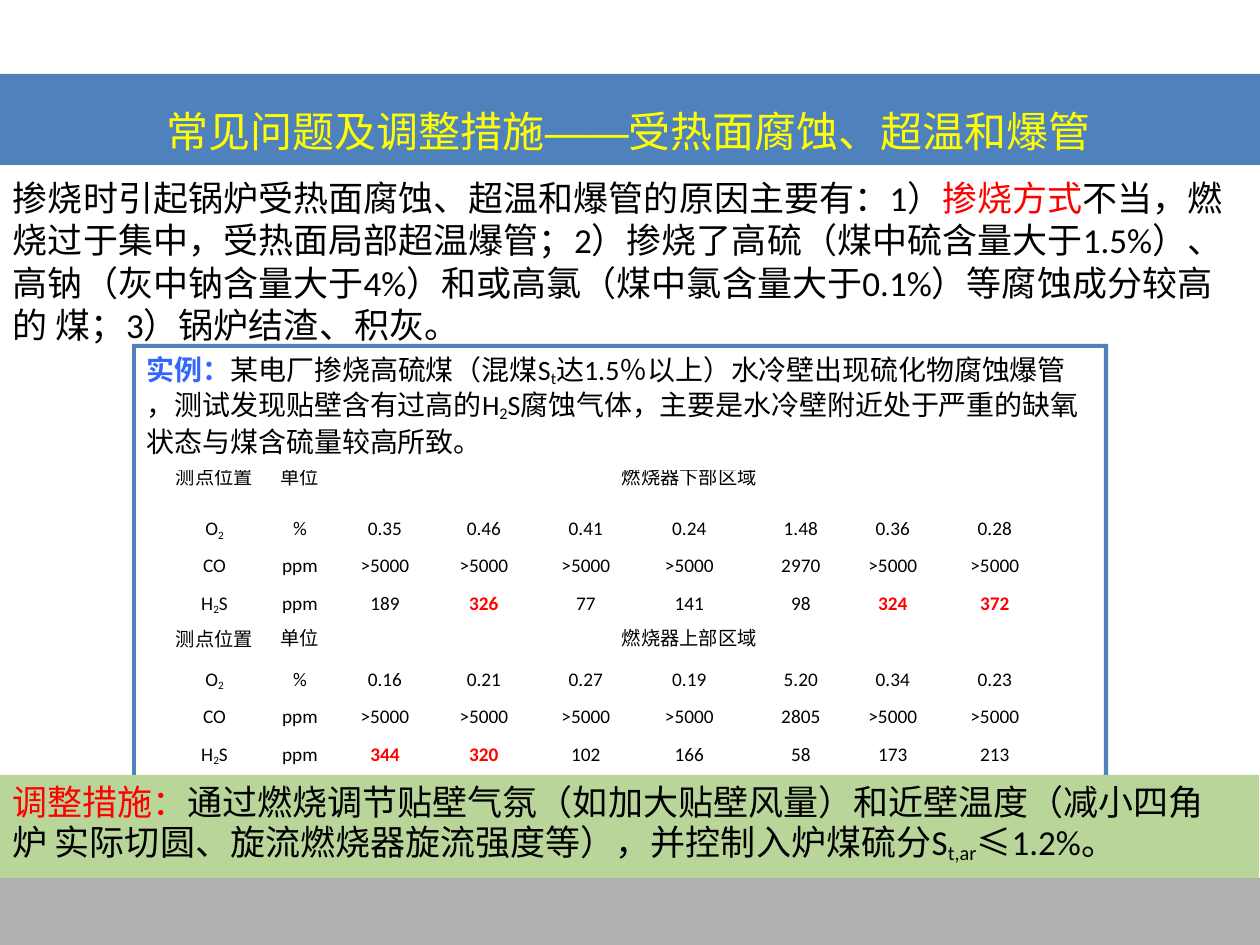
from itertools import groupby

from pptx import Presentation
from pptx import util as u
from pptx.dml.color import RGBColor
from pptx.enum import shapes, text

PX = 914400 / 126
HAN, LATIN, DASH = "Noto Sans CJK SC", "Calibri", "Arial"
COLORS = {
    "gray": "B1B1B1", "blue": "4F81BC", "green": "B9D599", "yellow": "FFFF00",
    "black": "000000", "red": "FF0000", "label": "3366FF",
}

TITLE = [("常见问题及调整措施", {}), ("——", {"face": DASH}),
         ("受热面腐蚀、超温和爆管", {})]
RED, SUB = {"color": "red"}, {"sub": True}
CAUSE = [
    ("掺烧时引起锅炉受热面腐蚀、超温和爆管的原因主要有：1）", {}),
    ("掺烧方式", RED),
    ("不当，燃 烧过于集中，受热面局部超温爆管；2）掺烧了高硫（煤中硫含量大于1.5%）、 "
     "高钠（灰中钠含量大于4%）和或高氯（煤中氯含量大于0.1%）等腐蚀成分较高的 煤；"
     "3）锅炉结渣、积灰。", {}),
]
CASE = [
    ("实例：", {"color": "label", "bold": True}),
    ("某电厂掺烧高硫煤（混煤S", {}), ("t", SUB),
    ("达1.5％以上）水冷壁出现硫化物腐蚀爆管", {}),
]
FINDING = [
    ("，测试发现贴壁含有过高的H", {}), ("2", SUB),
    ("S腐蚀气体，主要是水冷壁附近处于严重的缺氧 状态与煤含硫量较高所致。", {}),
]
ACTION = [
    ("调整措施：", RED),
    ("通过燃烧调节贴壁气氛（如加大贴壁风量）和近壁温度（减小四角炉 实际切圆、"
     "旋流燃烧器旋流强度等），并控制入炉煤硫分S", {}),
    ("t,ar", SUB), ("≤1.2%。", {}),
]

WIDTHS = [97, 74, 96, 102, 81, 147, 76, 105, 79]
HEIGHTS = [29, 40, 37, 74, 40, 37, 30]
SHIFTS = {4: 21, 7: 3, 8: 23}
PADS = {"O2": 10, "CO": 7, "H2S": 8}
LOWER = {0: "测点位置", 1: "单位", 5: "燃烧器下部区域"}
UPPER = {**LOWER, 5: "燃烧器上部区域"}
GASES = [
    ["O2", "%", "0.35", "0.46", "0.41", "0.24", "1.48", "0.36", "0.28"],
    ["CO", "ppm", ">5000", ">5000", ">5000", ">5000", "2970", ">5000", ">5000"],
    ["H2S", "ppm", "189", "326", "77", "141", "98", "324", "372"],
    ["O2", "%", "0.16", "0.21", "0.27", "0.19", "5.20", "0.34", "0.23"],
    ["CO", "ppm", ">5000", ">5000", ">5000", ">5000", "2805", ">5000", ">5000"],
    ["H2S", "ppm", "344", "320", "102", "166", "58", "173", "213"],
]
HIGH = {"326", "324", "372", "344", "320"}


def px(n):
    return u.Emu(round(n * PX))


def rgb(name):
    return RGBColor.from_string(COLORS[name])


def assign(obj, **values):
    for key, value in values.items():
        setattr(obj, key, value)


def add_run(para, words, size, color="black", bold=False, sub=False, face=None):
    """Add words, giving Latin and Chinese stretches their own font."""
    for ascii_, chars in groupby(words, str.isascii):
        run = para.add_run()
        run.text = "".join(chars)
        assign(run.font, size=u.Pt(size), bold=bold,
               name=face or (LATIN if ascii_ else HAN))
        run.font.color.rgb = rgb(color)
        props = run.font._element
        if sub:
            props.set("baseline", "-16000")
        east = props.makeelement(
            "{http://schemas.openxmlformats.org/drawingml/2006/main}ea",
            {"typeface": face or HAN})
        props.find("{*}latin").addnext(east)


def fill_para(para, pieces, size, left=0, right=0, color="black", **values):
    assign(para, **values)
    props = para._p.get_or_add_pPr()
    props.set("marL", str(px(left)))
    props.set("marR", str(px(right)))
    for words, style in pieces:
        add_run(para, words, size, **{"color": color, **style})


def set_frame(frame, wrap=True, top=3):
    assign(frame, margin_left=0, margin_right=0, margin_bottom=0,
           margin_top=px(top), word_wrap=wrap,
           vertical_anchor=text.MSO_ANCHOR.TOP,
           auto_size=text.MSO_AUTO_SIZE.NONE)


def paint(shape, color):
    shape.shadow.inherit = False
    shape.fill.solid()
    shape.fill.fore_color.rgb = rgb(color)
    shape.line.fill.background()


def add_band(slide, x, y, w, h, color):
    kind = shapes.MSO_SHAPE.RECTANGLE
    paint(slide.shapes.add_shape(kind, px(x), px(y), px(w), px(h)), color)


def add_border(slide, x, y, w, h, edge):
    """Draw a hollow box as an outer and an inner contour."""
    r, b = x + w, y + h
    pen = slide.shapes.build_freeform(x, y, scale=PX)
    pen.add_line_segments([(r, y), (r, b), (x, b)], close=True)
    x, y, r, b = x + edge, y + edge, r - edge, b - edge
    pen.move_to(x, y)
    pen.add_line_segments([(x, b), (r, b), (r, y)], close=True)
    paint(pen.convert_to_shape(), "blue")


def add_title(slide):
    title = slide.shapes.title
    slide.shapes._spTree.append(title._element)
    assign(title, left=px(166), top=px(100), width=px(928), height=px(54))
    set_frame(title.text_frame, wrap=False)
    fill_para(title.text_frame.paragraphs[0], TITLE, 24, left=1, color="yellow",
              alignment=text.PP_ALIGN.LEFT, line_spacing=u.Pt(30))


def add_text(slide, x, y, w, h, paras):
    frame = slide.shapes.add_textbox(px(x), px(y), px(w), px(h)).text_frame
    set_frame(frame)
    for i, (pieces, style) in enumerate(paras):
        para = frame.add_paragraph() if i else frame.paragraphs[0]
        fill_para(para, pieces, **style)


def gas_pieces(words):
    """Set the 2 of a gas formula low and the high readings in red."""
    if words in PADS:
        return [(c, SUB if c == "2" else {}) for c in words]
    return [(words, {"color": "red", "bold": True} if words in HIGH else {})]


def fill_head(para, words, **values):
    fill_para(para, [(words, {})] if words else [], 11,
              alignment=text.PP_ALIGN.CENTER, line_spacing=u.Pt(11.7), **values)


def add_grid(slide):
    grid = slide.shapes.add_table(
        len(HEIGHTS), len(WIDTHS), px(166), px(469),
        px(sum(WIDTHS)), px(sum(HEIGHTS))).table
    assign(grid, first_row=False, horz_banding=False)
    for col, w in zip(grid.columns, WIDTHS):
        col.width = px(w)
    for row, h in zip(grid.rows, HEIGHTS):
        row.height = px(h)
    for i in range(len(HEIGHTS)):
        for j in range(len(WIDTHS)):
            cell = grid.cell(i, j)
            cell.fill.background()
            pad = PADS[GASES[i - 1][0]] if i else 0
            assign(cell, margin_left=0, margin_right=0, margin_bottom=0,
                   margin_top=px(pad))
            para = cell.text_frame.paragraphs[0]
            if i == 0:
                fill_head(para, LOWER.get(j))
                continue
            fill_para(para, gas_pieces(GASES[i - 1][j]), 11,
                      left=SHIFTS.get(j, 0), alignment=text.PP_ALIGN.CENTER)
            if i == 3 and j in UPPER:
                fill_head(cell.text_frame.add_paragraph(), UPPER[j],
                          space_before=u.Pt(8.3))
    grid.cell(0, 6).merge(grid.cell(0, 8))


def main():
    deck = Presentation()
    assign(deck, slide_width=px(1260), slide_height=px(945))
    slide = deck.slides.add_slide(deck.slide_layouts[5])
    add_band(slide, 0, 878, 1260, 67, "gray")
    add_band(slide, 0, 74, 1260, 91, "blue")
    add_title(slide)
    add_border(slide, 132, 344, 976, 440, 4)
    large = {"size": 20, "line_spacing": u.Pt(24.2)}
    small = {"size": 16, "line_spacing": u.Pt(20), "left": 139}
    add_text(slide, 8, 173, 1236, 280, [
        (CAUSE, {**large, "left": 5, "right": 13}),
        (CASE, {**small, "space_before": u.Pt(4.2)}),
        (FINDING, {**small, "right": 158}),
    ])
    add_grid(slide)
    add_band(slide, 0, 775, 1259, 103, "green")
    add_text(slide, -4, 777, 1268, 88,
             [(ACTION, {**large, "left": 16, "right": 38})])
    deck.save("out.pptx")


if __name__ == "__main__":
    main()
